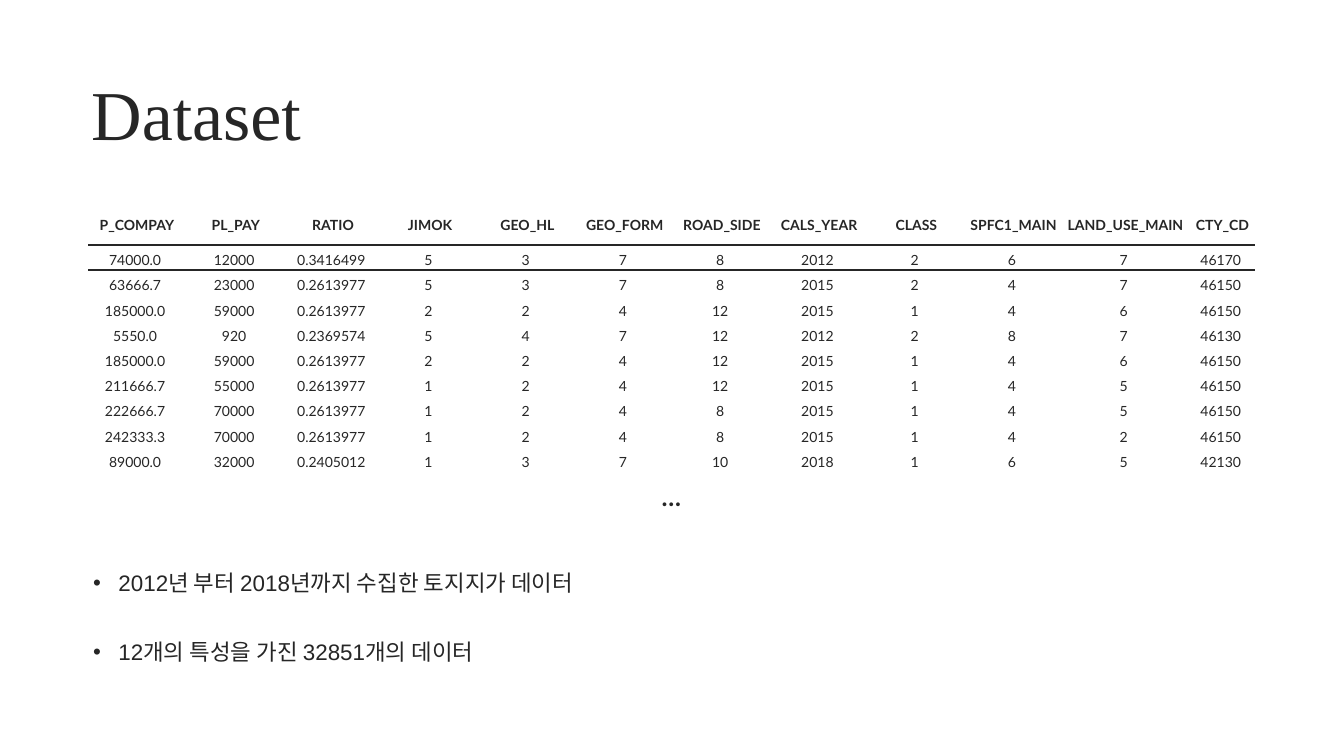
import pptx
import pptx.dml.color
import pptx.enum.text
import pptx.oxml
import pptx.oxml.ns
import pptx.util
from pptx.util import Cm

COLORS = {"ink": "262626"}
LEFT, WIDTH = Cm(4.45), Cm(58.8)
NO_GRID = "{2D5ABB26-0587-4C30-8999-92F81FD0307C}"
ALIGN = pptx.enum.text.PP_ALIGN
ANCHOR = pptx.enum.text.MSO_ANCHOR

HEADS = ["P_COMPAY", "PL_PAY", "RATIO", "JIMOK", "GEO_HL", "GEO_FORM", "ROAD_SIDE",
         "CALS_YEAR", "CLASS", "SPFC1_MAIN", "LAND_USE_MAIN", "CTY_CD"]
ROWS = [
    ["74000.0", "12000", "0.3416499", "5", "3", "7", "8", "2012", "2", "6", "7", "46170"],
    ["63666.7", "23000", "0.2613977", "5", "3", "7", "8", "2015", "2", "4", "7", "46150"],
    ["185000.0", "59000", "0.2613977", "2", "2", "4", "12", "2015", "1", "4", "6", "46150"],
    ["5550.0", "920", "0.2369574", "5", "4", "7", "12", "2012", "2", "8", "7", "46130"],
    ["185000.0", "59000", "0.2613977", "2", "2", "4", "12", "2015", "1", "4", "6", "46150"],
    ["211666.7", "55000", "0.2613977", "1", "2", "4", "12", "2015", "1", "4", "5", "46150"],
    ["222666.7", "70000", "0.2613977", "1", "2", "4", "8", "2015", "1", "4", "5", "46150"],
    ["242333.3", "70000", "0.2613977", "1", "2", "4", "8", "2015", "1", "4", "2", "46150"],
    ["89000.0", "32000", "0.2405012", "1", "3", "7", "10", "2018", "1", "6", "5", "42130"],
]
NOTES = ["2012년 부터 2018년까지 수집한 토지지가 데이터",
         "12개의 특성을 가진 32851개의 데이터"]


def add_run(para, text, size, font, bold=False):
    run = para.add_run()
    run.text = text
    run.font.size = pptx.util.Pt(size)
    run.font.name = font
    run.font.bold = bold
    run.font.color.rgb = pptx.dml.color.RGBColor.from_string(COLORS["ink"])


def add_box(slide, top, width, height):
    frame = slide.shapes.add_textbox(LEFT, top, width, height).text_frame
    frame.word_wrap = True
    return frame


def add_title(slide, text):
    frame = add_box(slide, Cm(3.05), Cm(22.68), Cm(5.28))
    frame.vertical_anchor = ANCHOR.MIDDLE
    frame.margin_left = frame.margin_right = Cm(0.15)
    frame.margin_top = frame.margin_bottom = Cm(0.15)
    add_run(frame.paragraphs[0], text, 100, "Times New Roman")


def add_notes(slide, notes):
    frame = add_box(slide, Cm(28.17), WIDTH, Cm(5.41))
    for i, note in enumerate(notes):
        para = frame.paragraphs[0] if i == 0 else frame.add_paragraph()
        para.line_spacing = 1.3
        para.space_before = pptx.util.Pt(48 if i else 0)
        props = para._p.get_or_add_pPr()
        props.set("marL", str(Cm(1.27)))
        props.set("indent", str(-Cm(1.27)))
        for tag, key, val in (("buFont", "typeface", "Arial"), ("buChar", "char", "•")):
            mark = pptx.oxml.parse_xml(
                f'<a:{tag} {pptx.oxml.ns.nsdecls("a")} {key}="{val}"/>')
            props.append(mark)
        add_run(para, note, 32, "Arial")


def add_rule(cell, side):
    line = pptx.oxml.parse_xml(
        f'<a:ln{side} {pptx.oxml.ns.nsdecls("a")} w="{pptx.util.Pt(2.25)}">'
        f'<a:solidFill><a:srgbClr val="{COLORS["ink"]}"/></a:solidFill></a:ln{side}>')
    cell._tc.get_or_add_tcPr().append(line)


def fill_cell(cell, text, size=20, bold=False, rules=""):
    for side in rules:
        add_rule(cell, side)
    cell.fill.background()
    cell.vertical_anchor = ANCHOR.MIDDLE
    cell.margin_left = cell.margin_right = cell.margin_top = Cm(0.03)
    cell.margin_bottom = 0
    para = cell.text_frame.paragraphs[0]
    para.alignment = ALIGN.CENTER
    para.line_spacing = 1.3
    add_run(para, text, size, "Lato", bold)


def add_grid(slide, heads, rows):
    count = len(rows) + 2
    frame = slide.shapes.add_table(count, len(heads), LEFT, Cm(10.03), WIDTH, Cm(15.01))
    grid = frame.table
    grid.first_row = grid.horz_banding = False
    grid._tbl.tblPr.find(pptx.oxml.ns.qn("a:tableStyleId")).text = NO_GRID
    for col, width in zip(grid.columns, [4.9] * 10 + [6.38, 3.4]):
        col.width = Cm(width)
    for i, row in enumerate(grid.rows):
        row.height = Cm(1.27 if i else 2.31)

    # Head row: all but the first name sit half a space to the right
    for c, head in enumerate(heads):
        fill_cell(grid.cell(0, c), f" {head}" if c else head, bold=True, rules="B")

    # Data rows: the first one is ruled above and below
    for r, row in enumerate(rows, 1):
        for c, text in enumerate(row):
            fill_cell(grid.cell(r, c), text if c else f"{text} ",
                      rules="TB" if r == 1 else "")

    # Closing row across the whole table
    last = grid.cell(count - 1, 0)
    last.merge(grid.cell(count - 1, len(heads) - 1))
    fill_cell(last, "…", 36, True)
    last._tc.get_or_add_tcPr().set("vert", "eaVert")


def main():
    deck = pptx.Presentation()
    deck.slide_width, deck.slide_height = Cm(67.74), Cm(38.1)
    slide = deck.slides.add_slide(deck.slide_layouts[6])
    add_title(slide, "Dataset")
    add_notes(slide, NOTES)
    add_grid(slide, HEADS, ROWS)
    deck.save("out.pptx")


if __name__ == "__main__":
    main()
